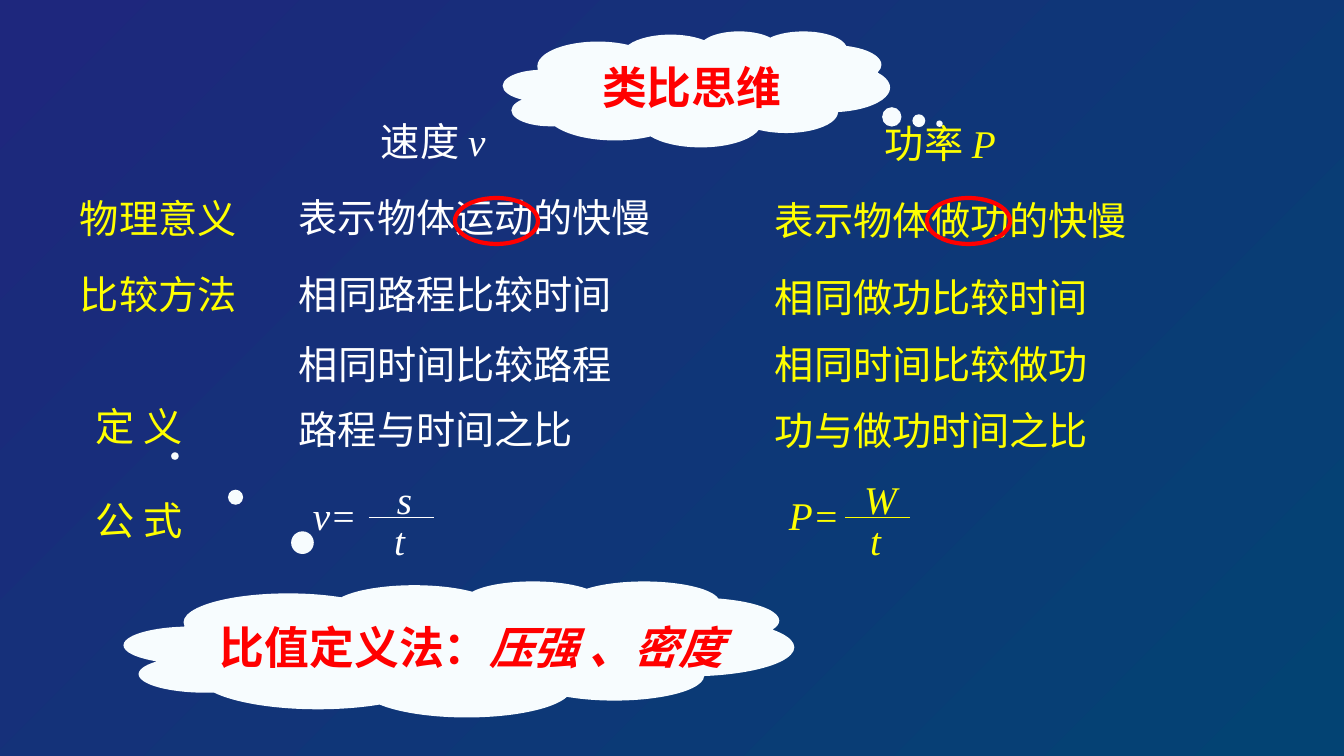
from dataclasses import dataclass

from lxml.etree import SubElement
from pptx import Presentation
from pptx.dml.color import RGBColor
from pptx.enum.shapes import MSO_CONNECTOR, MSO_SHAPE
from pptx.enum.text import MSO_ANCHOR, PP_ALIGN
from pptx.oxml.ns import qn
from pptx.util import Pt

PAGE_WIDTH, PAGE_HEIGHT = 1344, 756
SCALE = 12192000 / PAGE_WIDTH


@dataclass(frozen=True)
class Theme:
    background: tuple = ("1E277D", "034373")
    speed: str = "FFFFFF"
    power: str = "FFFF00"
    accent: str = "FF0000"
    cloud: str = "F7FCFE"
    chinese: str = "Noto Sans CJK SC"
    latin: str = "Arial"
    symbol: str = "Times New Roman"
    body: int = 28
    heading: int = 32


THEME = Theme()


def px(length):
    return round(length * SCALE)


def place(box):
    return [px(length) for length in box]


def rgb(colour):
    return RGBColor.from_string(colour)


def set_font(font, name, size, colour, bold=False, italic=False):
    """Style a font and give it the matching East Asian face."""
    font.name, font.size = name, Pt(size)
    font.bold, font.italic = bold, italic
    font.color.rgb = rgb(colour)
    SubElement(font._rPr, qn("a:ea"), typeface=THEME.chinese)


def add_label(page, box, lines, colour, name=THEME.chinese, italic=False,
              align=PP_ALIGN.LEFT, anchor=MSO_ANCHOR.TOP):
    """Each line is a (text, line spacing) pair."""
    frame = page.shapes.add_textbox(*place(box)).text_frame
    frame.word_wrap = True
    frame.vertical_anchor = anchor
    for index, (text, spacing) in enumerate(lines):
        para = frame.add_paragraph() if index else frame.paragraphs[0]
        para.alignment, para.line_spacing = align, spacing
        para.add_run().text = text
        set_font(para.font, name, THEME.body, colour, italic=italic)


def add_quantity(page, box, name, symbol, colour):
    frame = page.shapes.add_textbox(*place(box)).text_frame
    frame.word_wrap = True
    para = frame.paragraphs[0]
    for text, face in ((name, THEME.chinese), (symbol, THEME.symbol)):
        span = para.add_run()
        span.text = text
        set_font(span.font, face, THEME.body, colour, italic=face == THEME.symbol)


def add_ring(page, box):
    ring = page.shapes.add_shape(MSO_SHAPE.OVAL, *place(box))
    ring.shadow.inherit = False
    ring.fill.background()
    ring.line.color.rgb = rgb(THEME.accent)
    ring.line.width = Pt(3)


def add_formula(page, box, symbol, numerator, denominator, colour):
    """Box holds the left, top and width of the fraction bar."""
    left, top, width = box
    add_label(page, (left - 66, top - 31, 342, 57), [(symbol + "=", 1.0)],
              colour, THEME.symbol, True)
    for text, shift, rise in ((numerator, 9, -55), (denominator, 4, -14)):
        add_label(page, (left + shift, top + rise, 53, 65), [(text, 1.2)], colour,
                  THEME.symbol, True, PP_ALIGN.CENTER, MSO_ANCHOR.MIDDLE)
    bar = page.shapes.add_connector(
        MSO_CONNECTOR.STRAIGHT, px(left), px(top), px(left + width), px(top))
    bar.line.color.rgb = rgb(colour)
    bar.line.width = Pt(0.5)
    SubElement(bar._element.spPr, qn("a:effectLst"))


def add_column(page, box, heading, entries, ring_shift, formula, colour):
    """Entries are (top, width, height, lines), measured from the box."""
    left, top = box
    shift, name, symbol = heading
    add_quantity(page, (left + shift, top, 143, 57), name, symbol, colour)
    for drop, width, height, lines in entries:
        add_label(page, (left, top + drop, width, height), lines, colour)
    add_ring(page, (left + ring_shift, 198, 83, 46))
    add_formula(page, (left + 80, 517, 65), *formula, colour)


def add_row_names(page, box):
    left, top = box
    for shift, drop, width, text in (
            (0, 0, 178, "物理意义"), (0, 76, 178, "比较方法"),
            (16, 208, 119, "定 义"), (16, 302, 119, "公 式")):
        add_label(page, (left + shift, top + drop, width, 57), [(text, 1.0)],
                  THEME.power)


def add_cloud(page, box, pointer):
    cloud = page.shapes.add_shape(MSO_SHAPE.CLOUD_CALLOUT, *place(box))
    cloud.adjustments[0], cloud.adjustments[1] = pointer
    cloud.shadow.inherit = False
    cloud.fill.solid()
    cloud.fill.fore_color.rgb = rgb(THEME.cloud)
    cloud.line.fill.background()


def add_title(page, box):
    left, top, width, height = box
    add_cloud(page, box, (0.628, 0.299))
    title = page.shapes.title
    title.left, title.top, title.width, title.height = place(
        (left + 89, top + 12, 202, 76))
    title.text_frame.text = "类比思维"
    title.text_frame.vertical_anchor = MSO_ANCHOR.MIDDLE
    para = title.text_frame.paragraphs[0]
    para.alignment, para.line_spacing = PP_ALIGN.LEFT, 1.2
    set_font(para.font, THEME.latin, THEME.heading, THEME.accent, bold=True)
    page.shapes._spTree.append(title._element)


def add_conclusion(page, box):
    left, top, width, height = box
    add_cloud(page, box, (-0.424, -1.419))
    frame = page.shapes.add_textbox(
        *place((left + 86, top + 13, 576, 94))).text_frame
    frame.word_wrap = True
    frame.vertical_anchor = MSO_ANCHOR.MIDDLE
    para = frame.paragraphs[0]
    para.line_spacing = 1.2
    for text, face in (("比值定义法：", THEME.latin), ("压强 、密度", THEME.symbol)):
        span = para.add_run()
        span.text = text
        set_font(span.font, face, THEME.heading, THEME.accent, bold=True,
                 italic=face == THEME.symbol)


def add_comparison_page(deck):
    page = deck.slides.add_slide(deck.slide_layouts[5])
    fill = page.background.fill
    fill.gradient()
    fill.gradient_angle = 315
    for stop, colour in zip(fill.gradient_stops, THEME.background):
        stop.color.rgb = rgb(colour)

    add_row_names(page, (70, 189))
    add_column(page, (289, 112), (82, "速度 ", "v"), [
        (76, 377, 57, [("表示物体运动的快慢", 1.0)]),
        (153, 431, 129, [("相同路程比较时间", 1.0), ("相同时间比较路程", 1.5)]),
        (288, 297, 57, [("路程与时间之比", 1.0)]),
    ], 166, ("v", "s", "t"), THEME.speed)
    add_column(page, (765, 114), (110, "功率 ", "P"), [
        (77, 377, 57, [("表示物体做功的快慢", 1.0)]),
        (154, 431, 57, [("相同做功比较时间", 1.0)]),
        (198, 337, 81, [("相同时间比较做功", 1.5)]),
        (287, 349, 57, [("功与做功时间之比", 1.0)]),
    ], 162, ("P", "W", "t"), THEME.power)
    add_title(page, (503, 31, 387, 116))
    add_conclusion(page, (124, 581, 670, 136))


def main():
    deck = Presentation()
    deck.slide_width, deck.slide_height = px(PAGE_WIDTH), px(PAGE_HEIGHT)
    add_comparison_page(deck)
    deck.save("out.pptx")


if __name__ == "__main__":
    main()
